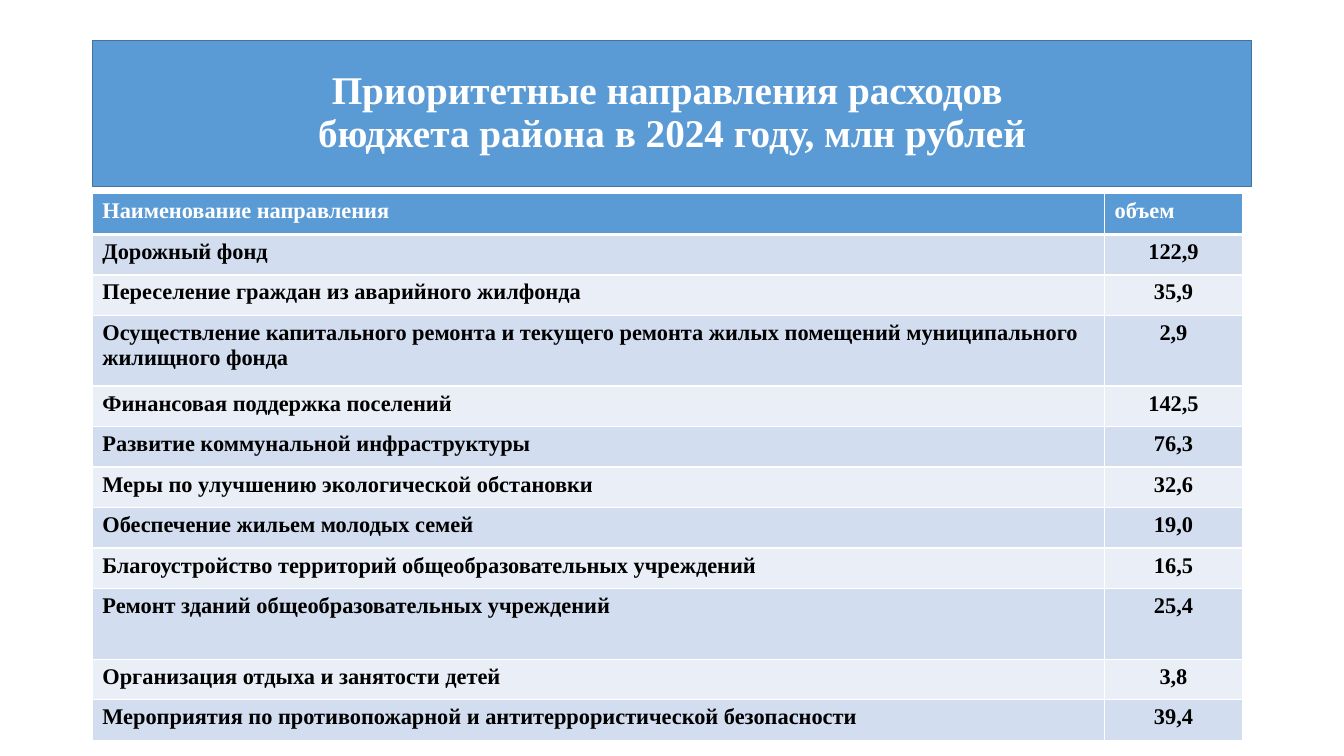
from lxml import etree
from pptx import Presentation
from pptx.dml.color import RGBColor
from pptx.enum.text import MSO_ANCHOR, MSO_AUTO_SIZE, PP_ALIGN
from pptx.oxml.ns import qn
from pptx.util import Pt

LEFT = PP_ALIGN.LEFT
CENTER = PP_ALIGN.CENTER
MIDDLE = MSO_ANCHOR.MIDDLE
NO_FIT = MSO_AUTO_SIZE.NONE

COLORS = {
    "blue": "5B9BD5",
    "outline": "43739E",
    "dark_band": "D2DEEF",
    "light_band": "EAEFF7",
    "white": "FFFFFF",
    "black": "000000",
}
FONT = "Times New Roman"
ROW_HEIGHT = 28.95
TALL_ROW_HEIGHT = 50.4
TALL_ROWS = (3, 9)

ROWS = [
    ("Наименование направления", "объем"),
    ("Дорожный фонд", "122,9"),
    ("Переселение граждан из аварийного жилфонда", "35,9"),
    ("Осуществление капитального ремонта и текущего ремонта жилых помещений "
     "муниципального жилищного фонда", "2,9"),
    ("Финансовая поддержка поселений", "142,5"),
    ("Развитие коммунальной инфраструктуры", "76,3"),
    ("Меры по улучшению экологической обстановки", "32,6"),
    ("Обеспечение жильем молодых семей", "19,0"),
    ("Благоустройство территорий общеобразовательных учреждений", "16,5"),
    ("Ремонт зданий общеобразовательных учреждений", "25,4"),
    ("Организация отдыха и занятости детей", "3,8"),
    ("Мероприятия по противопожарной и антитеррористической безопасности", "39,4"),
]


def write_text(frame, text, size=16, color="black", align=LEFT, spacing=1.0):
    frame.text = text
    para = frame.paragraphs[0]
    para.alignment = align
    para.line_spacing = spacing
    for span in para.runs:
        span.font.name = FONT
        span.font.size = Pt(size)
        span.font.bold = True
        span.font.color.rgb = RGBColor.from_string(COLORS[color])


def set_borders(cell, bottom_width):
    properties = cell._tc.get_or_add_tcPr()
    for side, width in (("L", 1), ("R", 1), ("T", 1), ("B", bottom_width)):
        line = etree.SubElement(properties, qn(f"a:ln{side}"), w=str(Pt(width)))
        fill = etree.SubElement(line, qn("a:solidFill"))
        etree.SubElement(fill, qn("a:srgbClr"), val=COLORS["white"])


deck = Presentation()
deck.slide_width = Pt(960)
deck.slide_height = Pt(540)
page = deck.slides.add_slide(deck.slide_layouts[5])

title = page.shapes.title
title.left, title.top, title.width, title.height = Pt(66), Pt(28.75), Pt(828), Pt(104.4)
title.fill.solid()
title.fill.fore_color.rgb = RGBColor.from_string(COLORS["blue"])
title.line.color.rgb = RGBColor.from_string(COLORS["outline"])
title.line.width = Pt(1)
title.text_frame.word_wrap = True
title.text_frame.auto_size = NO_FIT
title.text_frame.vertical_anchor = MIDDLE
write_text(title.text_frame,
           "Приоритетные направления расходов \vбюджета района в 2024 году, млн рублей",
           size=28, color="white", align=CENTER, spacing=0.9)

table = page.shapes.add_table(len(ROWS), 2, Pt(66), Pt(138.5), Pt(821.5), Pt(390.3)).table
table.columns[0].width = Pt(723)
table.columns[1].width = Pt(98.5)

for row_index, row in enumerate(ROWS):
    header = row_index == 0
    band = "blue" if header else "dark_band" if row_index % 2 else "light_band"
    table.rows[row_index].height = Pt(TALL_ROW_HEIGHT if row_index in TALL_ROWS else ROW_HEIGHT)
    for column_index, text in enumerate(row):
        cell = table.cell(row_index, column_index)
        set_borders(cell, bottom_width=3 if header else 1)
        cell.fill.solid()
        cell.fill.fore_color.rgb = RGBColor.from_string(COLORS[band])
        write_text(cell.text_frame, text,
                   color="white" if header else "black",
                   align=CENTER if column_index and not header else LEFT)

deck.save("out.pptx")
